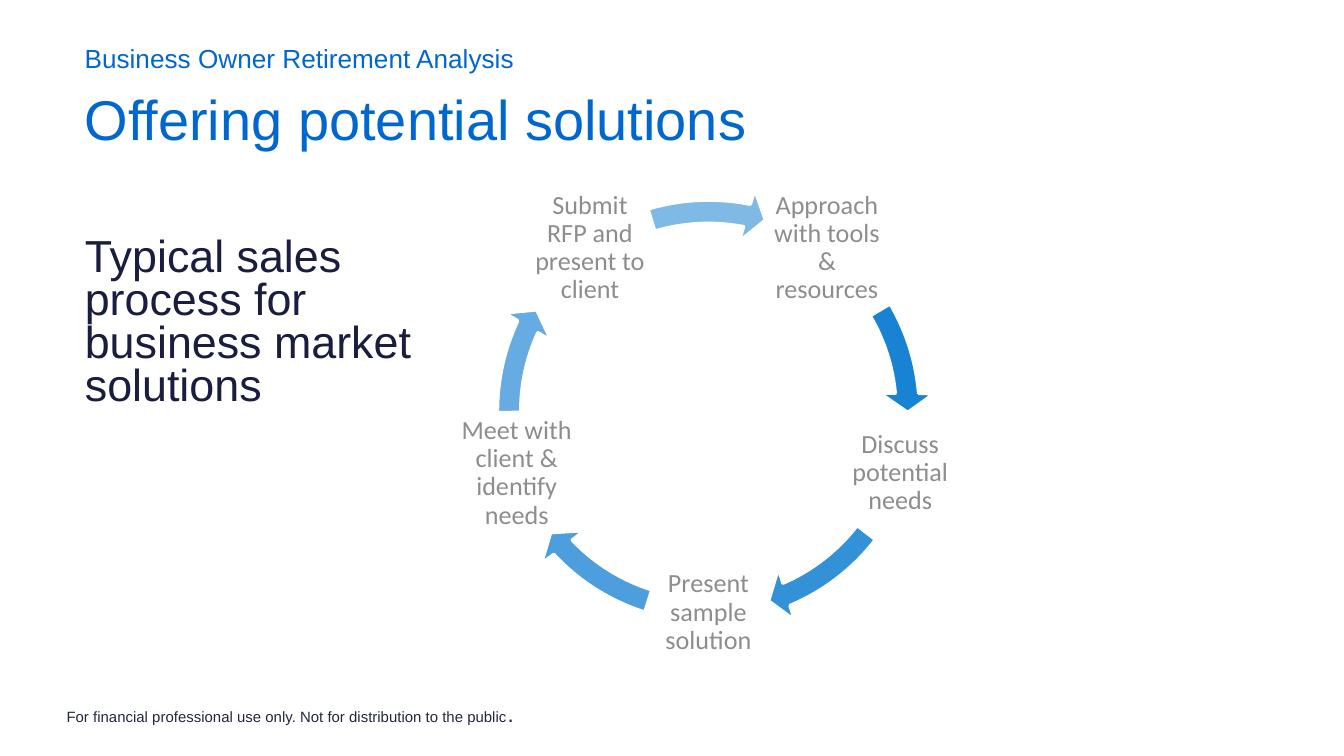
import math
from dataclasses import dataclass

import pptx
import pptx.dml.color
import pptx.enum.shapes
import pptx.enum.text
import pptx.util
from lxml import etree
from pptx.oxml.ns import qn
from pptx.util import Cm, Pt

ALIGN = pptx.enum.text.PP_ALIGN
ANCHOR = pptx.enum.text.MSO_ANCHOR

BLUE = "0067CF"
NAVY = "191D3F"
GREY = "8C8D8E"
INK = "23273F"
RING_BLUE = "0076CF"

# Cycle geometry, in centimetres
CENTER_X, CENTER_Y = 13.39, 7.77
RADIUS = 3.81
STEP_SIZE = 2.29
RING_SIZE = 8.58


@dataclass
class Span:
    text: str
    size: float
    color: str
    font: str = "Arial"


@dataclass
class Step:
    label: str
    arrow_start: float  # degrees, clockwise from the right
    arrow_end: float
    opacity: int  # percent


STEPS = [
    Step("Approach with tools & resources", 329.44, 354.88, 90),
    Step("Discuss potential needs", 37.56, 66.9, 80),
    Step("Present sample solution", 107.5, 136.84, 70),
    Step("Meet with client & identify needs", 179.52, 204.96, 60),
    Step("Submit RFP and present to client", 253.31, 281.09, 50),
]


def rgb(value: str) -> pptx.dml.color.RGBColor:
    return pptx.dml.color.RGBColor.from_string(value)


def write(box, spans: list[Span], align=ALIGN.LEFT, anchor=ANCHOR.TOP,
          line_spacing: float = 1.0) -> None:
    frame = box.text_frame
    frame.word_wrap = True
    frame.auto_size = pptx.enum.text.MSO_AUTO_SIZE.NONE
    frame.vertical_anchor = anchor
    para = frame.paragraphs[0]
    para.alignment = align
    para.line_spacing = line_spacing
    for span in spans:
        run = para.add_run()
        run.text = span.text
        run.font.name = span.font
        run.font.size = Pt(span.size)
        run.font.color.rgb = rgb(span.color)


def add_box(page, left: float, top: float, width: float, height: float):
    return page.shapes.add_textbox(Cm(left), Cm(top), Cm(width), Cm(height))


def add_step(page, step: Step, angle: float) -> None:
    x = CENTER_X + RADIUS * math.cos(math.radians(angle))
    y = CENTER_Y + RADIUS * math.sin(math.radians(angle))
    box = add_box(page, x - STEP_SIZE / 2, y - STEP_SIZE / 2, STEP_SIZE, STEP_SIZE)
    frame = box.text_frame
    frame.margin_left = frame.margin_right = Cm(0.05)
    frame.margin_top = frame.margin_bottom = Cm(0.05)
    write(box, [Span(step.label, 14, GREY, "Calibri")],
          ALIGN.CENTER, ANCHOR.MIDDLE, 0.9)


def add_arrow(page, step: Step) -> None:
    arrow = page.shapes.add_shape(
        pptx.enum.shapes.MSO_SHAPE.CIRCULAR_ARROW,
        Cm(CENTER_X - RING_SIZE / 2), Cm(CENTER_Y - RING_SIZE / 2),
        Cm(RING_SIZE), Cm(RING_SIZE))
    # Angle adjustments count 0.6 per degree
    values = (0.052, 5.6 * 0.6, step.arrow_end * 0.6, step.arrow_start * 0.6, 0.061)
    for index, value in enumerate(values):
        arrow.adjustments[index] = value
    arrow.shadow.inherit = False
    arrow.fill.solid()
    arrow.fill.fore_color.rgb = rgb(RING_BLUE)
    color = arrow.fill._xPr.find(qn("a:solidFill"))[0]
    etree.SubElement(color, qn("a:alpha")).set("val", str(step.opacity * 1000))
    arrow.line.color.rgb = rgb("FFFFFF")
    arrow.line.width = Pt(2)


def main() -> None:
    deck = pptx.Presentation()
    deck.slide_width, deck.slide_height = Cm(25.4), Cm(14.29)
    page = deck.slides.add_slide(deck.slide_layouts[5])

    # Title placeholder beside the cycle
    title = page.shapes.title
    title.left, title.top = Cm(1.35), Cm(4.37)
    title.width, title.height = Cm(7.39), Cm(1.3)
    write(title, [Span("Typical sales process for business market solutions", 24, NAVY)],
          line_spacing=0.8)

    # Headings
    write(add_box(page, 1.35, 0.79, 14.76, 1.04),
          [Span("Business Owner Retirement Analysis", 14, BLUE)], line_spacing=0.8)
    write(add_box(page, 1.35, 1.47, 15.27, 1.55),
          [Span("Offering potential solutions", 30, BLUE)])

    # Sales cycle, clockwise from the upper right
    for index, step in enumerate(STEPS):
        add_step(page, step, -54 + index * 360 / len(STEPS))
        add_arrow(page, step)

    # Disclaimer
    write(add_box(page, -0.18, 12.98, 11.33, 1.02),
          [Span("For financial professional use only. Not for distribution to the public", 8, INK),
           Span(".", 12, INK)],
          ALIGN.CENTER, ANCHOR.MIDDLE)

    deck.save("out.pptx")


if __name__ == "__main__":
    main()
